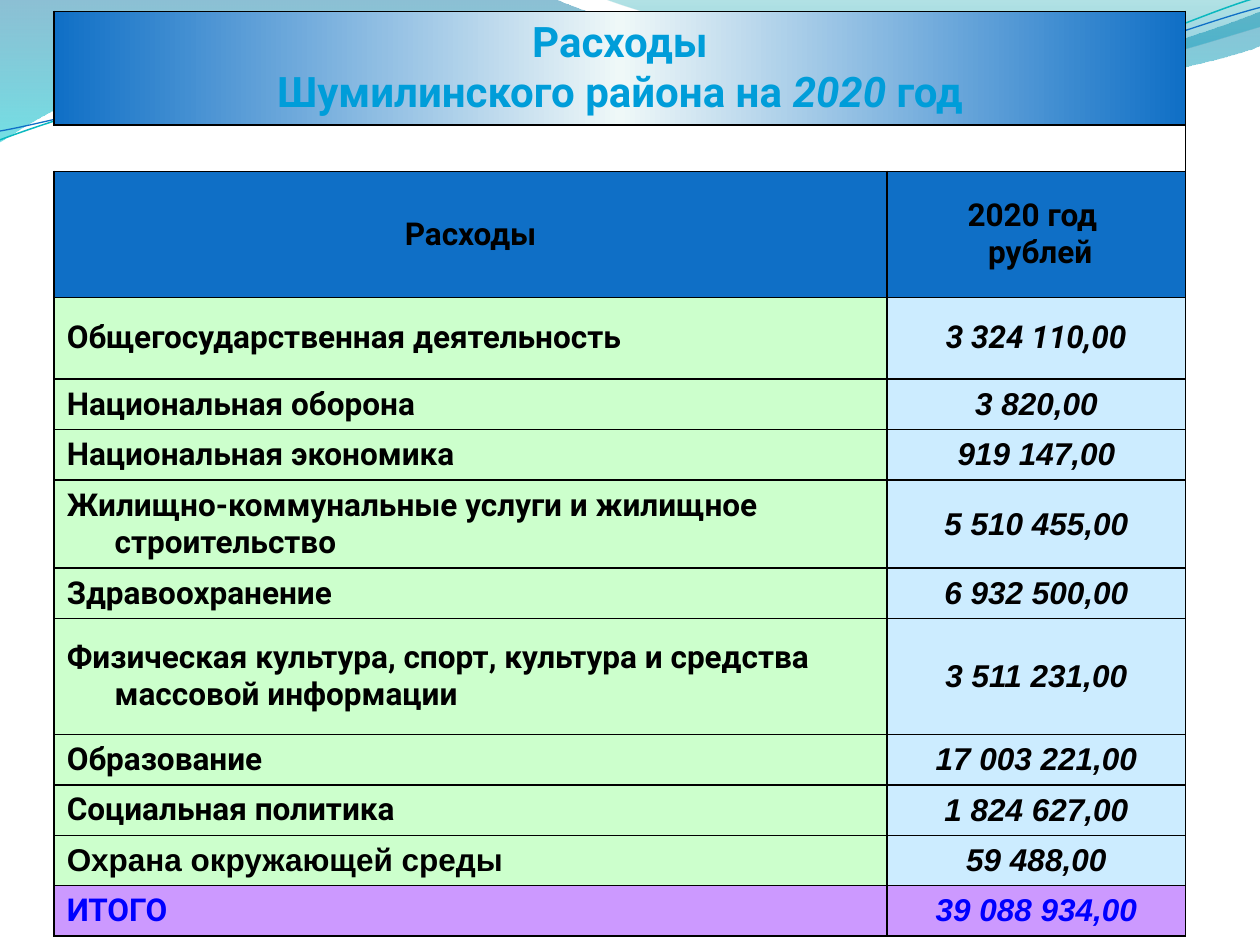
import math

from lxml import etree
from pptx import Presentation
from pptx.dml.color import RGBColor
from pptx.enum.text import MSO_ANCHOR, PP_ALIGN
from pptx.oxml.ns import qn
from pptx.util import Inches, Pt

CENTER, LEFT = PP_ALIGN.CENTER, PP_ALIGN.LEFT
MIDDLE = MSO_ANCHOR.MIDDLE
BLACK, BLUE, GREEN, SKY, LILAC = "000000", "0F6FC6", "CCFFCC", "CCECFF", "CC99FF"
SANS, ARIAL = "Roboto", "Arial"
INDENT = Inches(0.38)
TILT = 2.7

# Each wave is a start point followed by lines (2 numbers) and curves (6 numbers).
BANDS = [
    ([(0, 0), (4.4, -0.01), (4.76, 0.17, 6.64, 0.63, 7.58, 0.63),
      (8.53, 0.63, 9.58, 0.26, 10, 0.09), (10.01, 0.36),
      (9.83, 0.44, 8.7, 0.76, 7.46, 0.75), (6.22, 0.75, 3.82, 0.28, 2.57, 0.34),
      (1.29, 0.36, 0.46, 0.83, -0.01, 1.13), (0, 0)],
     [(0, "0074A1", 45), (100, "00C6CF", 55)]),
    ([(4.79, -0.01), (5.09, 0.11, 6.82, 0.62, 7.69, 0.65),
      (8.56, 0.69, 9.61, 0.32, 10, 0.21), (10, 0), (4.79, -0.01)],
     [(0, "00A1A9", 30), (80, "008BBF", 45)]),
]
# Path, centre of the tilt, colour, width
LINES = [
    ([(0, 1.11), (0.48, 0.93, 1.58, 0.57, 2.77, 0.52),
      (3.95, 0.47, 5.93, 0.89, 7.13, 0.8), (8.33, 0.71, 9.38, 0.15, 9.98, -0.02)],
     (4.99, 0.58), "0AB8BF", 0.85),
    ([(0, 1.04), (0.47, 0.96, 1.64, 0.61, 2.83, 0.56),
      (4.03, 0.51, 5.97, 0.84, 7.17, 0.75), (8.36, 0.67, 9.41, 0.21, 10, 0.06)],
     (5, 0.59), BLUE, 0.75),
]

# Name, amount, row height, name font, amount font
COSTS = [
    ("Общегосударственная деятельность", "3 324 110,00", 0.65, SANS, SANS),
    ("Национальная оборона", "3 820,00", 0.4, SANS, ARIAL),
    ("Национальная экономика", "919 147,00", 0.4, SANS, ARIAL),
    ("Жилищно-коммунальные услуги и жилищное строительство",
     "5 510 455,00", 0.7, SANS, ARIAL),
    ("Здравоохранение", "6 932 500,00", 0.4, SANS, ARIAL),
    ("Физическая культура, спорт, культура и средства массовой информации",
     "3 511 231,00", 0.92, SANS, ARIAL),
    ("Образование", "17 003 221,00", 0.4, SANS, ARIAL),
    ("Социальная политика", "1 824 627,00", 0.4, SANS, ARIAL),
    ("Охрана окружающей среды", "59 488,00", 0.4, ARIAL, ARIAL),
    ("ИТОГО", "39 088 934,00", 0.4, SANS, ARIAL),
]


def rgb(code):
    return RGBColor.from_string(code)


def shade(fill, node, stops, angle):
    """Give a gradient of (position, colour, opacity) stops, all in percent."""
    fill.gradient()
    fill.gradient_angle = angle
    group = next(node.iter(qn("a:gsLst")))
    for stop in list(group):
        group.remove(stop)
    for pos, code, alpha in stops:
        stop = etree.SubElement(group, qn("a:gs"), pos=str(pos * 1000))
        tint = etree.SubElement(stop, qn("a:srgbClr"), val=code)
        if alpha < 100:
            etree.SubElement(tint, qn("a:alpha"), val=str(alpha * 1000))


def turn(part, center):
    """Rotate the points of one path part clockwise by the tilt."""
    cos, sin = math.cos(math.radians(TILT)), math.sin(math.radians(TILT))
    cx, cy = center
    out = []
    for x, y in zip(part[::2], part[1::2]):
        out += [cx + (x - cx) * cos - (y - cy) * sin,
                cy + (x - cx) * sin + (y - cy) * cos]
    return out


def add_wave(shapes, path, close):
    """Draw a polygon of all points, then join each curve's three into a Bezier."""
    points = [(Inches(x), Inches(y)) for part in path
              for x, y in zip(part[::2], part[1::2])]
    pen = shapes.build_freeform(*points[0])
    pen.add_line_segments(points[1:], close=close)
    wave = pen.convert_to_shape()
    wave.shadow.inherit = False
    steps = iter(list(wave._element.iter(qn("a:lnTo"))))
    for part in path[1:]:
        step = next(steps)
        if len(part) == 6:
            curve = etree.Element(qn("a:cubicBezTo"))
            step.addprevious(curve)
            for node in (step, next(steps), next(steps)):
                curve.append(node[0])
                node.getparent().remove(node)
    return wave


def add_waves(slide):
    for path, stops in BANDS:
        wave = add_wave(slide.shapes, path, True)
        shade(wave.fill, wave._element.spPr, stops, 270)
        wave.line.fill.background()
    group = slide.shapes.add_group_shape()
    for path, center, code, width in LINES:
        flat = [turn(part, center) for part in path]
        wave = add_wave(group.shapes, flat, False)
        wave.rotation = 360 - TILT
        wave.fill.background()
        wave.line.color.rgb = rgb(code)
        wave.line.width = Pt(width)


def set_edges(cell, sides="LRTB"):
    props = cell._tc.get_or_add_tcPr()
    for side in "LRTB":
        edge = etree.SubElement(props, qn("a:ln" + side), w=str(Pt(1)))
        if side in sides:
            ink = etree.SubElement(edge, qn("a:solidFill"))
            etree.SubElement(ink, qn("a:srgbClr"), val=BLACK)
        else:
            etree.SubElement(edge, qn("a:noFill"))


def write(cell, lines, font, size=18, color=BLACK, align=CENTER, italic=False):
    """Fill a cell with lines; each is a text or a list of (text, italic) runs."""
    cell.vertical_anchor = MIDDLE
    frame = cell.text_frame
    for i, line in enumerate(lines):
        para = frame.add_paragraph() if i else frame.paragraphs[0]
        props = para._p.get_or_add_pPr()
        props.set("marL", str(INDENT))
        props.set("indent", str(-INDENT))
        para.alignment = align
        runs = [(line, italic)] if isinstance(line, str) else line
        for text, slant in runs:
            run = para.add_run()
            run.text = text
            run.font.name = font
            run.font.size = Pt(size)
            run.font.bold = True
            run.font.italic = slant
            run.font.color.rgb = rgb(color)


def paint(cell, code):
    set_edges(cell)
    cell.fill.solid()
    cell.fill.fore_color.rgb = rgb(code)


def add_title(table):
    head, tail = table.cell(0, 0), table.cell(0, 1)
    for cell in (head, tail):
        set_edges(cell)
    head.merge(tail)
    stops = [(0, BLUE, 100), (50, "EFF8F8", 100), (100, BLUE, 100)]
    shade(head.fill, head._tc.tcPr, stops, 0)
    name = [("Шумилинского района на ", False), ("2020 ", True), ("год", False)]
    write(head, ["Расходы", name], SANS, 24, "009DD9")


def add_gap(table):
    for col, sides in enumerate(("TB", "RTB")):
        cell = table.cell(1, col)
        set_edges(cell, sides)
        cell.fill.background()
        cell.text_frame.paragraphs[0].font.size = Pt(12)


def add_costs(slide):
    heights = [0.9, 0.37, 1] + [cost[2] for cost in COSTS]
    frame = slide.shapes.add_table(len(heights), 2, Inches(0.43), Inches(0.09),
                                   Inches(8.98), Inches(sum(heights)))
    table = frame.table
    table.first_row = table.horz_banding = False
    for col, width in zip(table.columns, (6.61, 2.37)):
        col.width = Inches(width)
    for row, height in zip(table.rows, heights):
        row.height = Inches(height)

    add_title(table)
    add_gap(table)
    for col, lines in enumerate((["Расходы"], ["2020 год ", " рублей"])):
        paint(table.cell(2, col), BLUE)
        write(table.cell(2, col), lines, SANS)
    for row, (name, amount, _, font, digits) in enumerate(COSTS, 3):
        total = name == "ИТОГО"
        color = "0000FF" if total else BLACK
        left, right = table.cell(row, 0), table.cell(row, 1)
        paint(left, LILAC if total else GREEN)
        paint(right, LILAC if total else SKY)
        write(left, [name], font, color=color, align=LEFT)
        write(right, [amount], digits, color=color, italic=True)


def main():
    deck = Presentation()
    deck.slide_width, deck.slide_height = Inches(10), Inches(7.5)
    slide = deck.slides.add_slide(deck.slide_layouts[6])
    add_waves(slide)
    add_costs(slide)
    deck.save("out.pptx")


if __name__ == "__main__":
    main()
